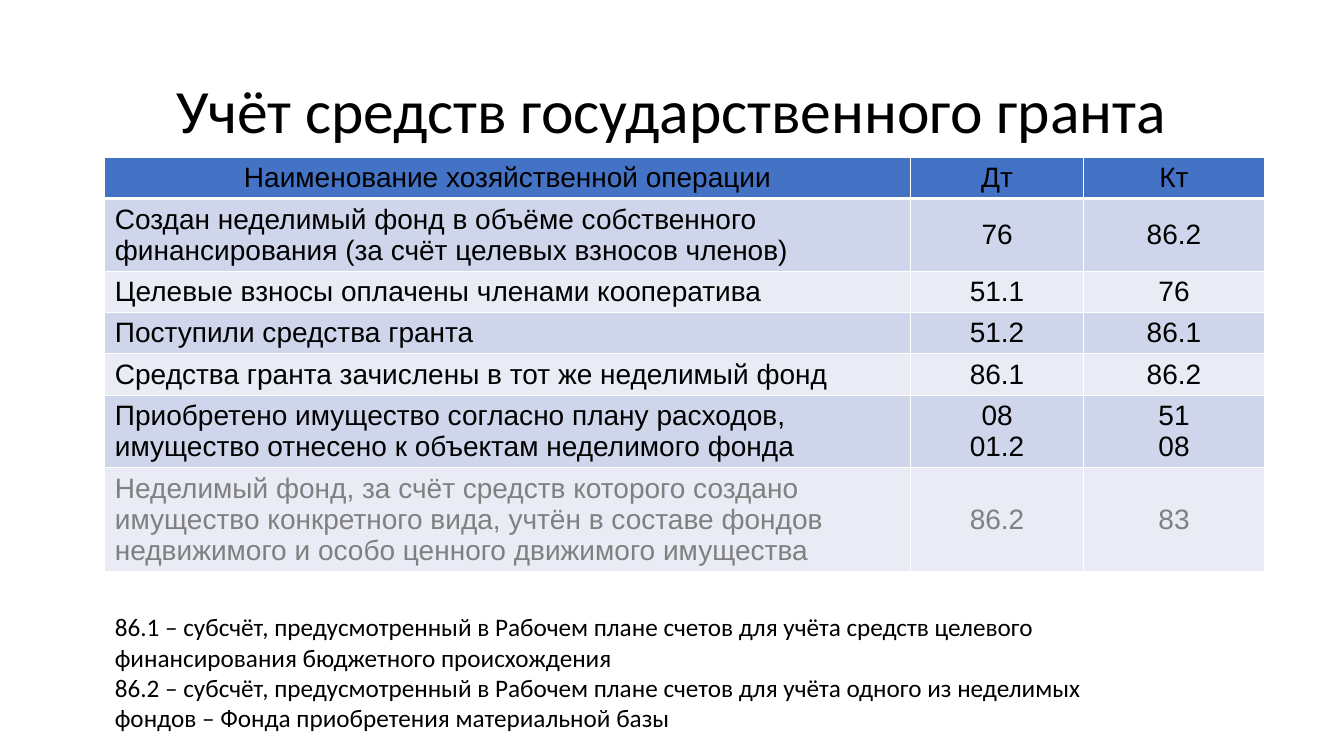
from dataclasses import dataclass
from lxml.etree import SubElement as Sub
from pptx import Presentation
from pptx.dml.color import RGBColor as RGB
from pptx.enum.text import MSO_ANCHOR as Anchor, MSO_AUTO_SIZE as Auto, PP_ALIGN as Align
from pptx.oxml.ns import qn
from pptx.util import Inches, Pt


@dataclass(frozen=True)
class Theme:
    ink: str = "000000"
    mute: str = "808080"
    head: str = "4472C4"
    bands: tuple = ("CFD5EA", "E9EBF5")
    edge: str = "FFFFFF"
    face: str = "Calibri"
    grid: str = "Arial"
    big: int = 44
    mid: int = 20
    small: int = 18


class Deck:
    def __init__(self, theme):
        self.theme = theme
        self.file = Presentation()
        self.file.slide_width = Inches(13.33)
        self.file.slide_height = Inches(7.5)
        self.slide = self.file.slides.add_slide(self.file.slide_layouts[5])

    def wide(self, share):
        return round(self.file.slide_width * share / 100)

    def high(self, share):
        return round(self.file.slide_height * share / 100)

    def box(self, left, top, width, height):
        return self.wide(left), self.high(top), self.wide(width), self.high(height)

    def text(self, frame, lines, face, size, ink, align=Align.LEFT):
        for i, line in enumerate(lines):
            para = frame.paragraphs[0] if i == 0 else frame.add_paragraph()
            para.alignment = align
            run = para.add_run()
            run.text = line
            run.font.name = face
            run.font.size = Pt(size)
            run.font.bold = False
            run.font.color.rgb = RGB.from_string(ink)

    def title(self, words, place):
        shape = self.slide.shapes.title
        shape.left, shape.top, shape.width, shape.height = self.box(*place)
        frame = shape.text_frame
        frame.auto_size = Auto.NONE
        frame.vertical_anchor = Anchor.MIDDLE
        self.text(frame, [words], self.theme.face, self.theme.big, self.theme.ink, Align.CENTER)
        frame.paragraphs[0].line_spacing = 0.9

    def note(self, lines, place):
        frame = self.slide.shapes.add_textbox(*self.box(*place)).text_frame
        frame.word_wrap = True
        frame.auto_size = Auto.SHAPE_TO_FIT_TEXT
        self.text(frame, lines, self.theme.face, self.theme.small, self.theme.ink)

    def border(self, cell, base):
        props = cell._tc.get_or_add_tcPr()
        for side in ("lnL", "lnR", "lnT", "lnB"):
            width = base if side == "lnB" else 1
            line = Sub(props, qn(f"a:{side}"), w=str(Pt(width)))
            Sub(Sub(line, qn("a:solidFill")), qn("a:srgbClr"), val=self.theme.edge)

    def table(self, rows, place, cols, step):
        theme = self.theme
        grid = self.slide.shapes.add_table(len(rows), len(cols), *self.box(*place)).table
        for col, share in zip(grid.columns, cols):
            col.width = self.wide(share)
        for r, row in enumerate(rows):
            grid.rows[r].height = self.high(step)
            fill = theme.bands[(r - 1) % 2] if r else theme.head
            ink = theme.mute if r == len(rows) - 1 else theme.ink
            for c, words in enumerate(row):
                cell = grid.cell(r, c)
                cell.vertical_anchor = Anchor.MIDDLE
                self.border(cell, 1 if r else 3)
                cell.fill.solid()
                cell.fill.fore_color.rgb = RGB.from_string(fill)
                align = Align.LEFT if r and c == 0 else Align.CENTER
                self.text(cell.text_frame, words.split("\n"), theme.grid, theme.mid, ink, align)


ROWS = [
    ("Наименование хозяйственной операции", "Дт", "Кт"),
    ("Создан неделимый фонд в объёме собственного финансирования "
     "(за счёт целевых взносов членов)", "76", "86.2"),
    ("Целевые взносы оплачены членами кооператива", "51.1", "76"),
    ("Поступили средства гранта", "51.2", "86.1"),
    ("Средства гранта зачислены в тот же неделимый фонд", "86.1", "86.2"),
    ("Приобретено имущество согласно плану расходов, "
     "имущество отнесено к объектам неделимого фонда", "08\n01.2", "51\n08"),
    ("Неделимый фонд, за счёт средств которого создано имущество "
     "конкретного вида, учтён в составе фондов недвижимого "
     "и особо ценного движимого имущества", "86.2", "83"),
]
NOTES = [
    "86.1 – субсчёт, предусмотренный в Рабочем плане счетов для учёта "
    "средств целевого финансирования бюджетного происхождения",
    "86.2 – субсчёт, предусмотренный в Рабочем плане счетов для учёта "
    "одного из неделимых фондов – Фонда приобретения материальной базы",
]


def main():
    deck = Deck(Theme())
    deck.title("Учёт средств государственного гранта", (6.9, 5.33, 86.25, 19.33))
    deck.table(ROWS, (7.8, 20.8, 86.25, 58.4), (59.94, 12.9, 13.43), 5.47)
    deck.note(NOTES, (7.8, 80.27, 74.04, 17.47))
    deck.file.save("out.pptx")


if __name__ == "__main__":
    main()
